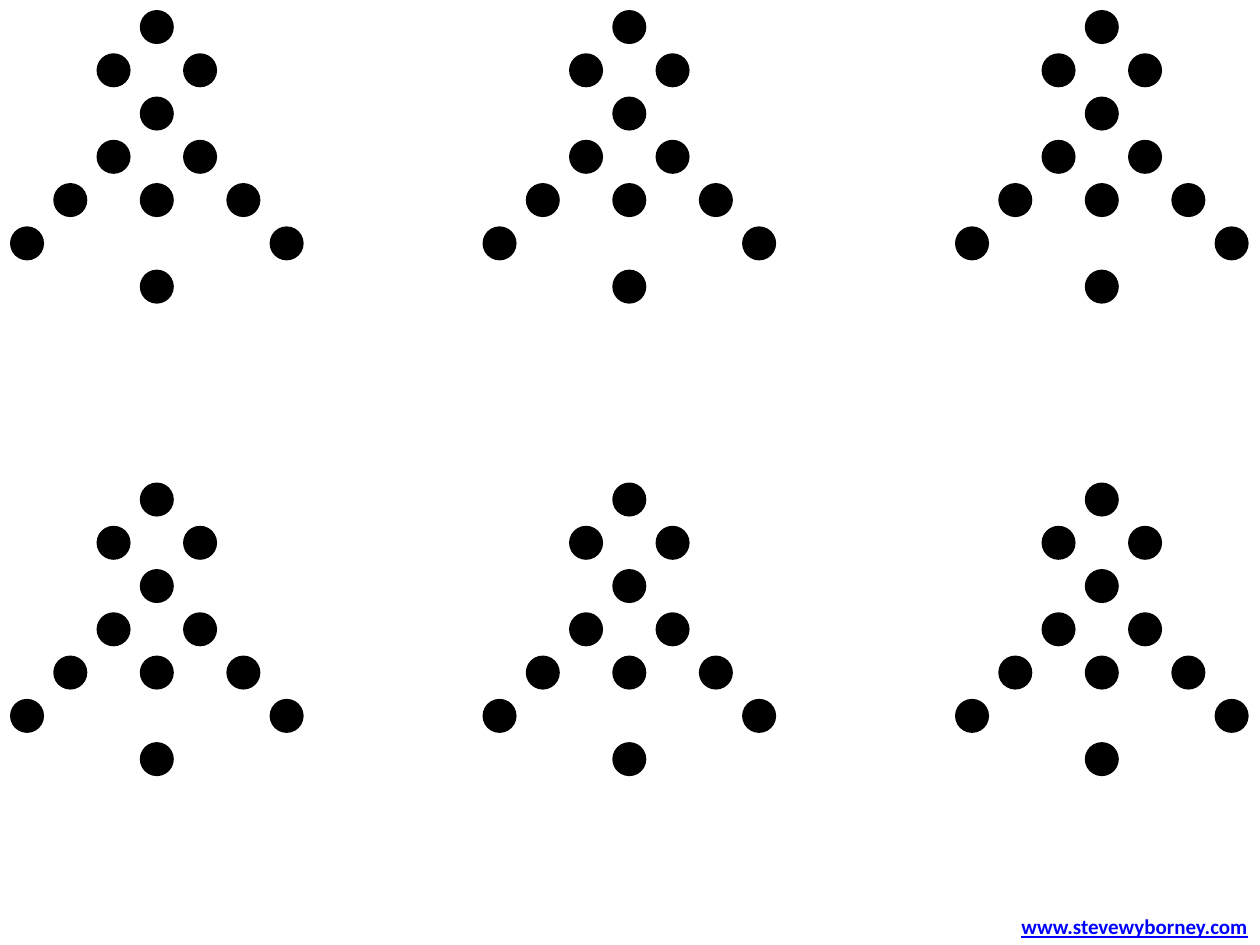
import pptx
import pptx.dml.color
import pptx.enum.shapes
import pptx.enum.text
import pptx.util
from pptx.util import Inches

THEME = {
    "dot": pptx.dml.color.RGBColor(0, 0, 0),
    "link": pptx.dml.color.RGBColor(0, 0, 255),
    "font": "Calibri",
    "size": pptx.util.Pt(12),
}

prs = pptx.Presentation()
prs.slide_width, prs.slide_height = Inches(10), Inches(7.5)
s = prs.slides.add_slide(prs.slide_layouts[6])

# Dot pattern as (column, row) cells on a 7 by 7 grid
DOTS = [(2, 1), (2, 3), (4, 3), (4, 1), (3, 2), (3, 4),
        (3, 0), (3, 6), (5, 4 + 1), (5, 4), (0, 5), (1, 4)]
DOTS[8] = (6, 5)
MARGIN, DOT, PITCH, CARD = 0.08, 0.27, 2.06 / 6, 3.75

# Two rows of three grouped patterns
for card_row in range(2):
    for card_col in range(3):
        grp = s.shapes.add_group_shape()
        for col, row in DOTS:
            sp = grp.shapes.add_shape(
                pptx.enum.shapes.MSO_SHAPE.OVAL,
                Inches(MARGIN + card_col * CARD + col * PITCH),
                Inches(MARGIN + card_row * CARD + row * PITCH),
                Inches(DOT), Inches(DOT))
            sp.shadow.inherit = False
            sp.fill.solid()
            sp.fill.fore_color.rgb = THEME["dot"]
            sp.line.fill.background()

# Web address in the bottom right corner
sp = s.shapes.add_textbox(Inches(7.98), Inches(7.2), Inches(2.02), Inches(0.3))
tf = sp.text_frame
tf.word_wrap = False
tf.auto_size = pptx.enum.text.MSO_AUTO_SIZE.SHAPE_TO_FIT_TEXT
p = tf.paragraphs[0]
p.alignment = pptx.enum.text.PP_ALIGN.RIGHT
r = p.add_run()
r.text = "www.stevewyborney.com"
fmt = {"name": THEME["font"], "size": THEME["size"], "bold": True, "underline": True}
for key, value in fmt.items():
    setattr(r.font, key, value)
r.font.color.rgb = THEME["link"]

prs.save("out.pptx")
